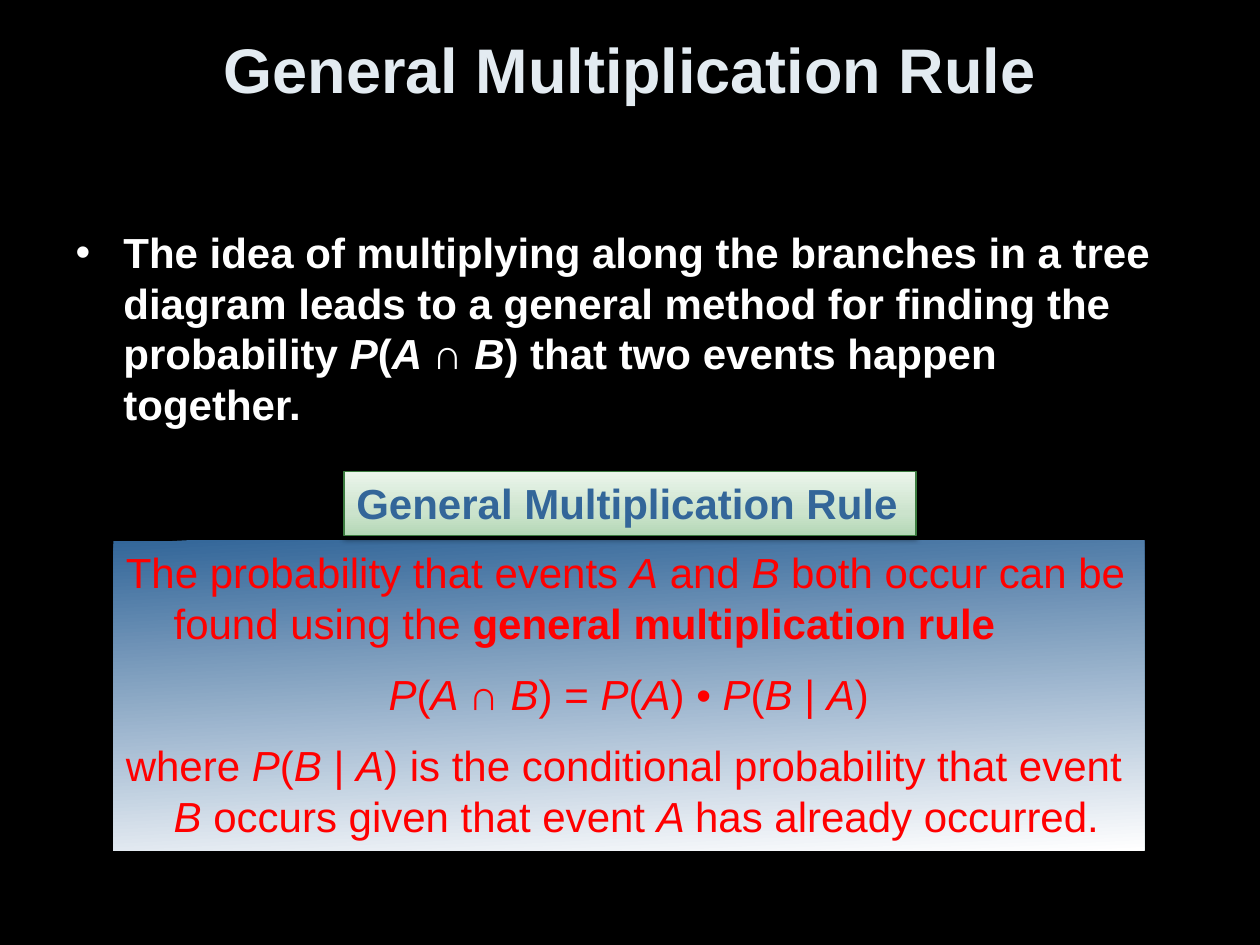
from lxml import etree
from pptx import Presentation
from pptx.dml.color import RGBColor
from pptx.enum.shapes import MSO_SHAPE as Preset
from pptx.enum.text import MSO_ANCHOR as Anchor, MSO_AUTO_SIZE as AutoSize, PP_ALIGN as Align
from pptx.oxml import parse_xml
from pptx.oxml.ns import nsdecls, qn
from pptx.util import Inches, Pt

BLACK = RGBColor(0x00, 0x00, 0x00)
WHITE = RGBColor(0xFF, 0xFF, 0xFF)
PALE_BLUE = RGBColor(0xE3, 0xEB, 0xF1)
BLUE = RGBColor(0x33, 0x66, 0x99)
RED = RGBColor(0xFF, 0x00, 0x00)
DARK_GREEN = RGBColor(0x3C, 0x7C, 0x40)
GREEN = RGBColor(0xB4, 0xD8, 0xB6)
LIGHT_GREEN = RGBColor(0xCB, 0xE3, 0xCC)
PALE_GREEN = RGBColor(0xEB, 0xF5, 0xEB)

FONT = "Arial"
INDENT = Inches(0.38)
TITLE = "General Multiplication Rule"


def place(shape, box):
    shape.left, shape.top, shape.width, shape.height = (Inches(length) for length in box)


def write(paragraph, text, *, size=24, color=RED, bold=False, align=Align.LEFT,
          after=0, hanging=False, bullet=None):
    """Write text in which _ switches italic and * switches bold."""
    properties = paragraph._p.get_or_add_pPr()
    properties.set("marL", str(INDENT if hanging else 0))
    properties.set("indent", str(-INDENT if hanging else 0))
    paragraph.alignment = align
    paragraph.space_before = Pt(0)
    paragraph.space_after = Pt(after)
    if bullet:
        etree.SubElement(properties, qn("a:buChar")).set("char", bullet)
    else:
        etree.SubElement(properties, qn("a:buNone"))

    for bold_index, bold_part in enumerate(text.split("*")):
        for italic_index, part in enumerate(bold_part.split("_")):
            if not part:
                continue
            run = paragraph.add_run()
            run.text = part
            run.font.name = FONT
            run.font.size = Pt(size)
            run.font.color.rgb = color
            run.font.bold = bold != (bold_index % 2 == 1)
            run.font.italic = italic_index % 2 == 1


def fill_gradient(shape, stops, angle):
    """Fill with (percent, colour) stops; the angle runs clockwise."""
    shape.fill.gradient()
    shape.fill.gradient_angle = 360 - angle
    stop_list = shape._element.spPr.find(qn("a:gradFill")).find(qn("a:gsLst"))
    for stop in list(stop_list):
        stop_list.remove(stop)
    for percent, color in stops:
        stop = etree.SubElement(stop_list, qn("a:gs"), pos=str(percent * 1000))
        etree.SubElement(stop, qn("a:srgbClr"), val=str(color))


def add_panel(slide, box, stops, angle, wrap=True):
    panel = slide.shapes.add_shape(Preset.RECTANGLE, 0, 0, 0, 0)
    place(panel, box)
    panel.shadow.inherit = False
    panel.line.fill.background()
    fill_gradient(panel, stops, angle)
    frame = panel.text_frame
    frame.word_wrap = wrap
    frame.auto_size = AutoSize.SHAPE_TO_FIT_TEXT
    frame.vertical_anchor = Anchor.TOP
    return panel


def add_title(slide, box):
    title = slide.shapes.title
    place(title, box)
    title.text_frame.vertical_anchor = Anchor.MIDDLE
    write(title.text_frame.paragraphs[0], TITLE, size=36, color=PALE_BLUE,
          bold=True, align=Align.CENTER)


def add_body(slide, box):
    body = slide.placeholders[1]
    place(body, box)
    write(body.text_frame.paragraphs[0],
          "The idea of multiplying along the branches in a tree diagram leads to a general "
          "method for finding the probability _P_(_A _∩ _B_) that two events happen together.",
          color=WHITE, bold=True, hanging=True, bullet="•")


def add_rule(slide, box):
    panel = add_panel(slide, box, [(0, BLUE), (100, WHITE)], 87)
    lines = [
        ("The probability that events _A_ and _B_ both occur can be found using the "
         "*general multiplication rule*", Align.LEFT),
        ("_P_(_A _*∩ *_B_) = _P_(_A_) • _P_(_B _| _A_)", Align.CENTER),
        ("where _P_(_B _| _A_) is the conditional probability that event _B _occurs "
         "given that event _A _has already occurred.", Align.LEFT),
    ]
    frame = panel.text_frame
    for index, (text, align) in enumerate(lines):
        paragraph = frame.add_paragraph() if index else frame.paragraphs[0]
        write(paragraph, text, align=align, after=12, hanging=True)


def add_rule_label(slide, box):
    label = add_panel(slide, box, [(0, GREEN), (35, LIGHT_GREEN), (100, PALE_GREEN)],
                      270, wrap=False)
    label.line.color.rgb = DARK_GREEN
    label.line.width = Pt(0.75)
    effects = label._element.spPr.find(qn("a:effectLst"))
    effects.append(parse_xml(
        f'<a:outerShdw {nsdecls("a")} blurRad="{Pt(3.1)}" dist="{Pt(1.6)}" dir="5400000" '
        f'rotWithShape="0"><a:srgbClr val="{BLACK}"><a:alpha val="38000"/></a:srgbClr>'
        '</a:outerShdw>'))
    write(label.text_frame.paragraphs[0], TITLE, color=BLUE, bold=True)


def main():
    presentation = Presentation()
    presentation.slide_width, presentation.slide_height = Inches(10), Inches(7.5)
    slide = presentation.slides.add_slide(presentation.slide_layouts[1])
    slide.background.fill.solid()
    slide.background.fill.fore_color.rgb = BLACK

    add_title(slide, (0.5, 0.08, 9, 0.92))
    add_body(slide, (0.5, 1.75, 9, 2.08))
    add_rule(slide, (0.9, 4.29, 8.18, 2.46))
    add_rule_label(slide, (2.73, 3.74, 4.54, 0.51))
    presentation.save("out.pptx")


if __name__ == "__main__":
    main()
